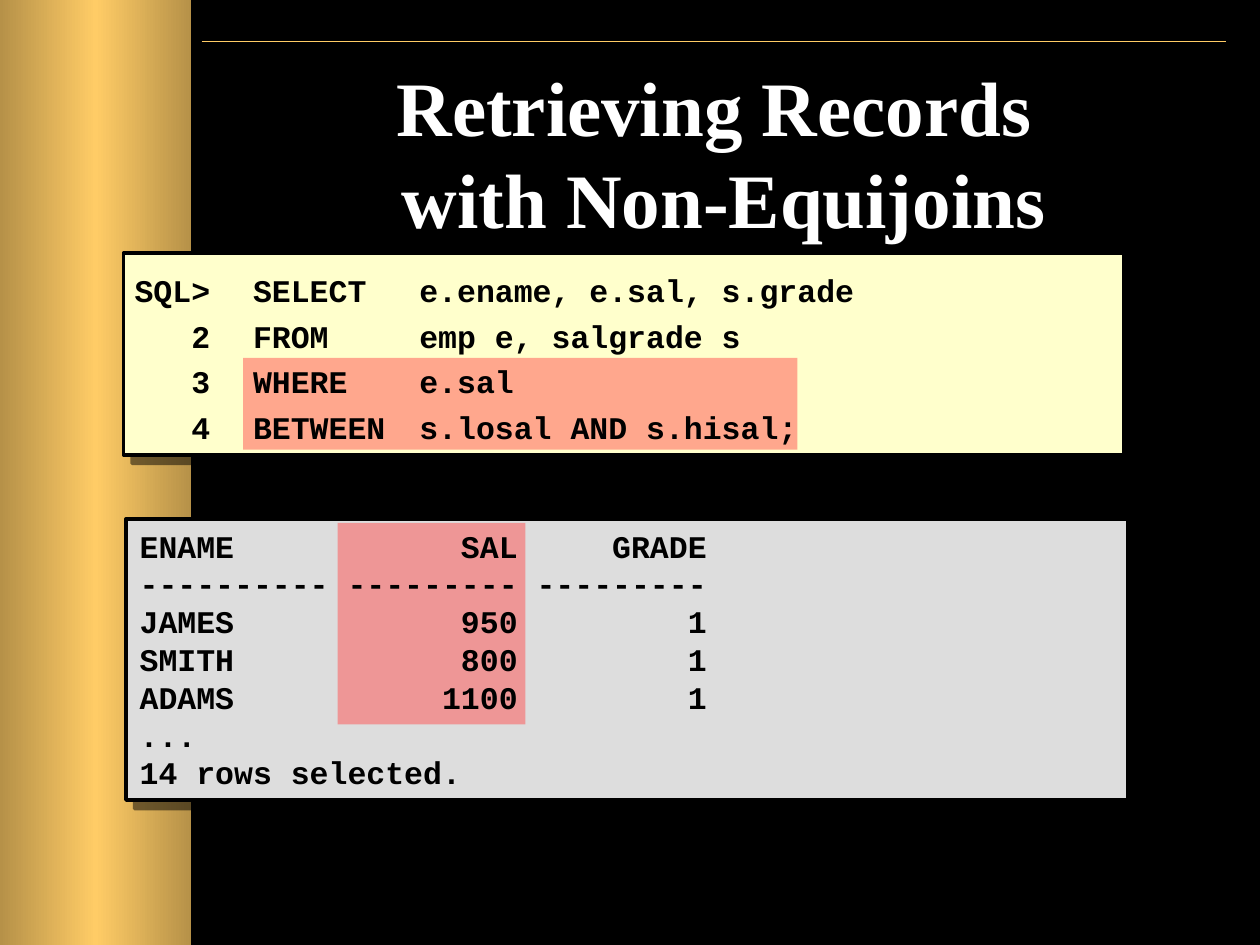
from lxml.etree import SubElement
from pptx import Presentation
from pptx.dml.color import RGBColor
from pptx.enum.shapes import MSO_CONNECTOR as Connector, MSO_SHAPE as Shape
from pptx.enum.text import MSO_ANCHOR as Anchor, PP_ALIGN as Align
from pptx.oxml.ns import qn
from pptx.util import Inches, Pt

COLORS = {
    "black": "000000",
    "white": "FFFFFF",
    "gold": "FFCC66",
    "code": "FFFFCC",
    "output": "DDDDDD",
    "highlight": "FF5050",
}


def add_element(parent, tag, **attributes):
    values = {name: str(value) for name, value in attributes.items()}
    return SubElement(parent, qn(tag), values)


class SlideBuilder:
    title_font = "Times New Roman"
    code_font = "Courier New"

    def __init__(self, presentation):
        self.slide = presentation.slides.add_slide(presentation.slide_layouts[6])

    def color(self, name):
        return RGBColor.from_string(COLORS[name])

    def background(self, color):
        fill = self.slide.background.fill
        fill.solid()
        fill.fore_color.rgb = self.color(color)

    def line(self, left, right, y, color):
        line = self.slide.shapes.add_connector(
            Connector.STRAIGHT, Inches(left), Inches(y), Inches(right), Inches(y))
        line.line.color.rgb = self.color(color)
        line.line.width = Pt(1)
        add_element(line._element.spPr, "a:effectLst")

    def rectangle(self, box, color):
        shape = self.slide.shapes.add_shape(Shape.RECTANGLE, *map(Inches, box))
        shape.shadow.inherit = False
        shape.fill.solid()
        shape.fill.fore_color.rgb = self.color(color)
        shape.line.fill.background()
        return shape

    def gradient_band(self, box, color):
        """Band that is bright in the middle and shaded at both edges."""
        shape = self.rectangle(box, color)
        shape.fill.gradient()
        shape.fill.gradient_angle = 0
        stops = shape._element.spPr.find(qn("a:gradFill")).find(qn("a:gsLst"))
        for stop in list(stops):
            stops.remove(stop)
        for position, shade in ((0, 46275), (50000, None), (100000, 46275)):
            stop = add_element(stops, "a:gs", pos=position)
            stop_color = add_element(stop, "a:srgbClr", val=COLORS[color])
            if shade:
                add_element(stop_color, "a:shade", val=shade)

    def panel(self, box, color):
        """Outlined box with a hard shadow to the lower right."""
        shape = self.rectangle(box, color)
        shape.line.color.rgb = self.color("black")
        shape.line.width = Pt(2)
        effects = shape._element.spPr.find(qn("a:effectLst"))
        shadow = add_element(effects, "a:outerShdw", blurRad=0, dist=Pt(7.1),
                             dir=45 * 60000, algn="ctr", rotWithShape=0)
        shadow_color = add_element(shadow, "a:srgbClr", val=COLORS["black"])
        add_element(shadow_color, "a:alpha", val=50000)

    def highlight(self, box):
        shape = self.rectangle(box, "highlight")
        fill = shape._element.spPr.find(qn("a:solidFill"))
        add_element(fill[0], "a:alpha", val=50000)

    def text(self, box, text, font, size, color, align=Align.LEFT,
             anchor=Anchor.TOP, spacing=None, tabs=()):
        frame = self.slide.shapes.add_textbox(*map(Inches, box)).text_frame
        frame.word_wrap = True
        frame.vertical_anchor = anchor
        frame.text = text
        for paragraph in frame.paragraphs:
            paragraph.alignment = align
            if spacing:
                paragraph.line_spacing = spacing
            if tabs:
                tab_list = add_element(paragraph._p.get_or_add_pPr(), "a:tabLst")
                for tab in tabs:
                    add_element(tab_list, "a:tab", pos=Inches(tab), algn="l")
            for run in paragraph.runs:
                run.font.name = font
                run.font.size = Pt(size)
                run.font.bold = True
                run.font.color.rgb = self.color(color)


def main():
    presentation = Presentation()
    presentation.slide_width = Inches(10)
    presentation.slide_height = Inches(7.5)
    builder = SlideBuilder(presentation)

    # Backdrop
    builder.background("black")
    builder.line(1.6, 9.73, 0.33, "gold")
    builder.gradient_band((0, 0, 1.52, 7.5), "gold")

    # Panels
    builder.panel((0.98, 2.01, 7.94, 1.6), "code")
    builder.panel((1, 4.12, 7.95, 2.23), "output")

    # Title, with a line break inside one paragraph
    builder.text((1.67, 0.42, 8.15, 1.25),
                 "Retrieving Records \vwith Non-Equijoins",
                 builder.title_font, 44, "white", align=Align.CENTER)

    # Highlights for the join condition and the salary column
    builder.highlight((1.93, 2.84, 4.4, 0.73))
    builder.highlight((2.68, 4.15, 1.49, 1.6))

    # Query result in fixed-width columns
    rows = [
        ("ENAME", "SAL", "GRADE"),
        ("-" * 10, "-" * 9, "-" * 9),
        ("JAMES", 950, 1),
        ("SMITH", 800, 1),
        ("ADAMS", 1100, 1),
    ]
    result = [f"{name:<10} {salary:>9} {grade:>9}" for name, salary, grade in rows]
    result += ["...", "14 rows selected."]
    builder.text((1.01, 4.13, 7.92, 2.2), "\n".join(result),
                 builder.code_font, 18, "black")

    # Query
    query = [
        ("SQL>", "SELECT", "e.ename, e.sal, s.grade"),
        (2, "FROM", "emp e, salgrade s"),
        (3, "WHERE", "e.sal"),
        (4, "BETWEEN", "s.losal AND s.hisal;"),
    ]
    lines = [f"{prompt:>4}\t{keyword}\t{clause}" for prompt, keyword, clause in query]
    builder.text((0.97, 2, 7.97, 1.63), "\n".join(lines),
                 builder.code_font, 18, "black", anchor=Anchor.MIDDLE,
                 spacing=1.2, tabs=(0.94, 2.26))

    presentation.save("out.pptx")


if __name__ == "__main__":
    main()
